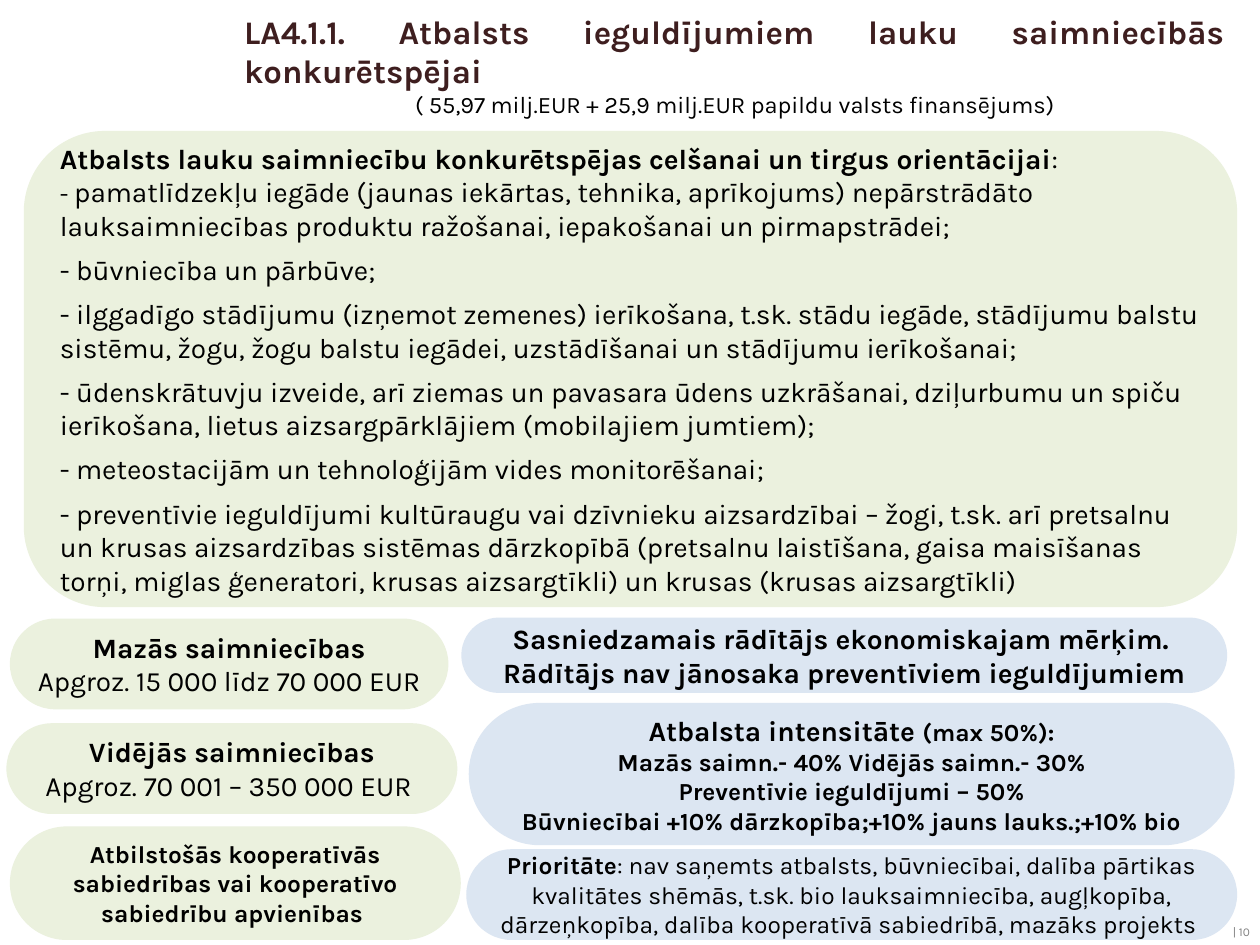
import pptx
import pptx.dml.color
import pptx.enum.shapes
import pptx.enum.text
import pptx.util

Cm, Pt = pptx.util.Cm, pptx.util.Pt
ALIGN = pptx.enum.text.PP_ALIGN
GREEN, BLUE, BROWN, GREY = "EBF1DE", "DCE6F2", "3E1E1F", "808080"


def rgb(color):
    return pptx.dml.color.RGBColor.from_string(color)


def add_paragraph(tf, runs, align, color="000000"):
    """Add a paragraph of (text, size, bold) runs, reusing the empty first one."""
    p = tf.paragraphs[0]
    if p.runs:
        p = tf.add_paragraph()
    p.alignment = align
    for text, size, bold in runs:
        r = p.add_run()
        r.text = text
        r.font.name = "Karla"
        r.font.size = Pt(size)
        r.font.bold = bold
        r.font.color.rgb = rgb(color)
    return p


prs = pptx.Presentation()
prs.slide_width, prs.slide_height = Cm(25.4), Cm(19.05)
s = prs.slides.add_slide(prs.slide_layouts[6])

# Page number
tf = s.shapes.add_textbox(Cm(22.45), Cm(18.52), Cm(3), Cm(0.53)).text_frame
tf.word_wrap = True
add_paragraph(tf, [("| 10", 6.8, False)], ALIGN.RIGHT, GREY)

# Title and funding
tf = s.shapes.add_textbox(Cm(4.67), Cm(0.1), Cm(20.29), Cm(2.44)).text_frame
tf.word_wrap = True
title = "LA4.1.1. Atbalsts ieguldījumiem lauku saimniecībās konkurētspējai "
funding = "( 55,97 milj.EUR + 25,9 milj.EUR papildu valsts finansējums)"
add_paragraph(tf, [(title, 18.8, True)], ALIGN.JUSTIFY, BROWN)
add_paragraph(tf, [(funding, 13.5, False)], ALIGN.CENTER)

# Rounded panels: left, top, width, height, corner, fill, alignment, paragraphs
activities = [
    "būvniecība un pārbūve;",
    "ilggadīgo stādījumu (izņemot zemenes) ierīkošana, t.sk. stādu iegāde, "
    "stādījumu balstu sistēmu, žogu, žogu balstu iegādei, uzstādīšanai un "
    "stādījumu ierīkošanai;",
    "ūdenskrātuvju izveide, arī ziemas un pavasara ūdens uzkrāšanai, "
    "dziļurbumu un spiču ierīkošana, lietus aizsargpārklājiem (mobilajiem jumtiem);",
    "meteostacijām un tehnoloģijām vides monitorēšanai;",
    "preventīvie ieguldījumi kultūraugu vai dzīvnieku aizsardzībai – žogi, "
    "t.sk. arī pretsalnu un krusas aizsardzības sistēmas dārzkopībā (pretsalnu "
    "laistīšana, gaisa maisīšanas torņi, miglas ģeneratori, krusas "
    "aizsargtīkli) un krusas (krusas aizsargtīkli)",
]
support = [
    [("Atbalsts lauku saimniecību konkurētspējas celšanai un tirgus orientācijai", 16, True),
     (":", 16, False)],
    [("- ", 14, False),
     ("pamatlīdzekļu iegāde (jaunas iekārtas, tehnika, aprīkojums) nepārstrādāto "
      "lauksaimniecības produktu ražošanai, iepakošanai un pirmapstrādei;", 16, False)],
] + [[("- " + text, 16, False)] for text in activities]
target = [
    [("Sasniedzamais rādītājs ekonomiskajam mērķim. ", 16, True)],
    [("Rādītājs nav jānosaka preventīviem ieguldījumiem", 16, True)],
]
priority = [[
    ("Prioritāte", 14, True),
    (": nav saņemts atbalsts, būvniecībai, dalība pārtikas kvalitātes shēmās, "
     "t.sk. bio lauksaimniecība, augļkopība, dārzeņkopība, dalība kooperatīvā "
     "sabiedrībā, mazāks projekts ", 14, False),
]]
intensity = [
    [("Atbalsta intensitāte ", 16, True), ("(max 50%):", 14, True)],
    [("Mazās saimn.- 40% Vidējās saimn.- 30%", 14, True)],
    [("Preventīvie ieguldījumi – 50%", 14, True)],
    [("Būvniecībai +10% dārzkopība;+10% jauns lauks.;+10% bio", 14, True)],
]
medium_farms = [
    [("Vidējās saimniecības", 16, True)],
    [("Apgroz. 70 001 – 350 000 EUR ", 16, False)],
]
small_farms = [
    [("Mazās saimniecības", 16, True)],
    [("Apgroz. 15 000 līdz 70 000 EUR ", 16, False)],
]
cooperatives = [[
    ("Atbilstošās kooperatīvās sabiedrības vai kooperatīvo sabiedrību apvienības ", 14, True),
]]
panels = [
    (9.3, 12.45, 15.44, 1.52, 0.5, BLUE, ALIGN.CENTER, target),
    (9.4, 17.12, 15.54, 1.83, 0.5, BLUE, ALIGN.CENTER, priority),
    (0.48, 2.64, 24.46, 9.6, 0.17, GREEN, ALIGN.LEFT, support),
    (9.45, 14.17, 15.44, 2.87, 0.5, BLUE, ALIGN.CENTER, intensity),
    (0.13, 14.58, 9.09, 1.83, 0.5, GREEN, ALIGN.CENTER, medium_farms),
    (0.2, 12.47, 8.84, 1.83, 0.5, GREEN, ALIGN.CENTER, small_farms),
    (0.2, 16.66, 9.09, 2.29, 0.5, GREEN, ALIGN.CENTER, cooperatives),
]
for left, top, width, height, corner, fill, align, paragraphs in panels:
    sp = s.shapes.add_shape(pptx.enum.shapes.MSO_SHAPE.ROUNDED_RECTANGLE,
                            Cm(left), Cm(top), Cm(width), Cm(height))
    sp.adjustments[0] = corner
    sp.shadow.inherit = False
    sp.fill.solid()
    sp.fill.fore_color.rgb = rgb(fill)
    sp.line.fill.background()
    tf = sp.text_frame
    tf.word_wrap = True
    tf.vertical_anchor = pptx.enum.text.MSO_ANCHOR.MIDDLE
    for runs in paragraphs:
        p = add_paragraph(tf, runs, align)
        if paragraphs is support and runs is not support[0]:
            p.space_after = Pt(6)

prs.save("out.pptx")
